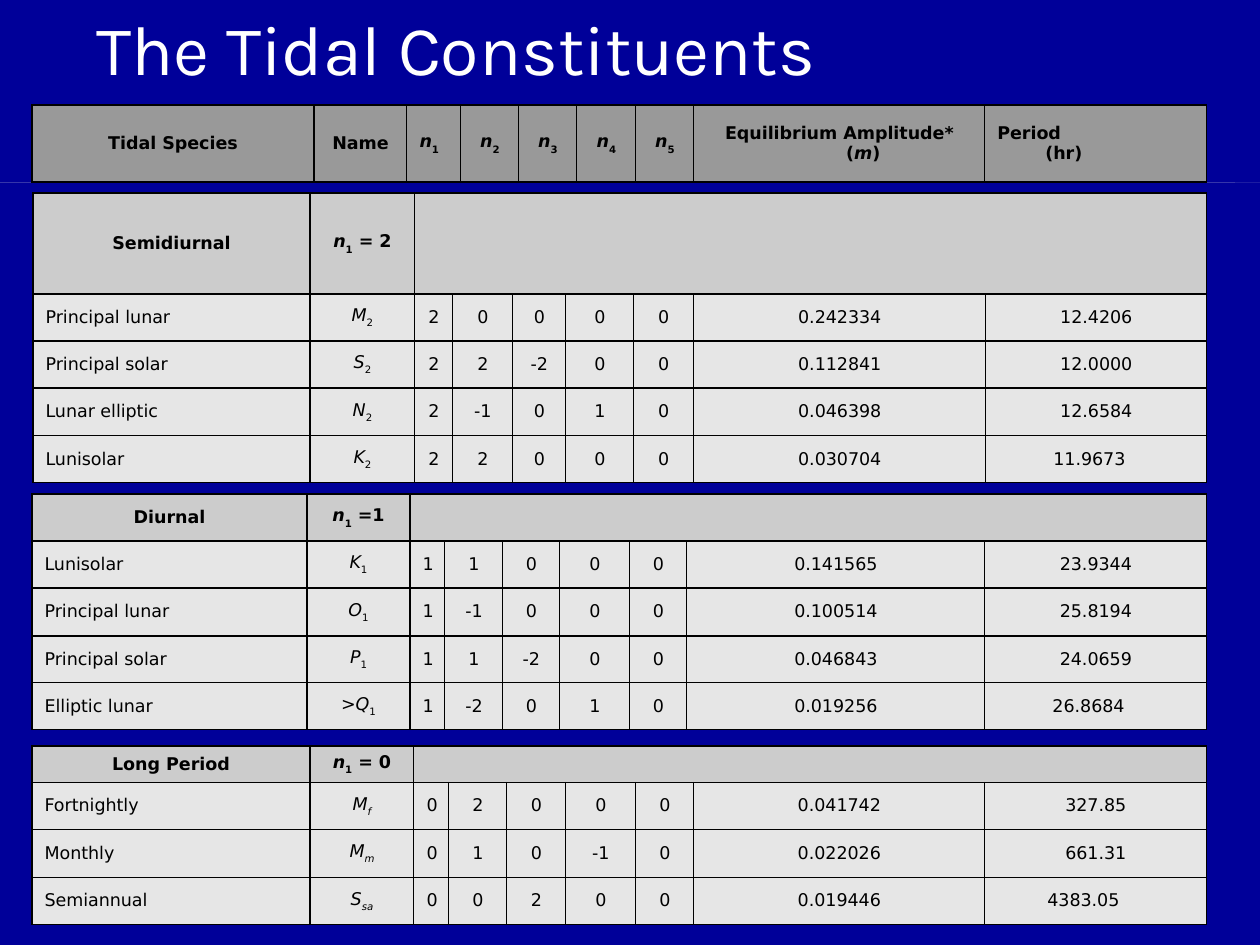
"""Build a slide of four aligned tables listing the tidal constituents."""
from lxml import etree
from pptx import Presentation
from pptx.dml.color import RGBColor
from pptx.enum.shapes import MSO_SHAPE
from pptx.enum.text import MSO_ANCHOR, PP_ALIGN
from pptx.oxml.ns import qn
from pptx.util import Pt

PX = 914400 // 126 + 1
RECT = MSO_SHAPE.RECTANGLE
MIDDLE = MSO_ANCHOR.MIDDLE
LEFT, CENTER = PP_ALIGN.LEFT, PP_ALIGN.CENTER
TITLE_FONT, TABLE_FONT = "Karla", "DejaVu Sans"
TABLE_SIZE = 10
HANG = 48
COLORS = {
    "background": "000099",
    "title": "FFFFFF",
    "text": "000000",
    "header": "999999",
    "group": "CCCCCC",
    "body": "E6E6E6",
}

HEADER_COLS = [282, 93, 54, 58, 58, 59, 58, 291, 222]
GROUPS = [
    {
        "name": "Semidiurnal", "tail": " = 2", "at": (33, 193), "indent": 55,
        "cols": [277, 105, 38, 60, 53, 68, 60, 292, 221],
        "rows": [101, 47, 47, 48, 47],
        "data": [
            ("Principal lunar", "", "M", "2", "2 0 0 0 0 0.242334 12.4206"),
            ("Principal solar", "", "S", "2", "2 2 -2 0 0 0.112841 12.0000"),
            ("Lunar elliptic", "", "N", "2", "2 -1 0 1 0 0.046398 12.6584"),
            ("Lunisolar", "", "K", "2", "2 2 0 0 0 0.030704 11.9673"),
        ],
    },
    {
        "name": "Diurnal", "tail": " =1", "at": (32, 494), "indent": 55,
        "cols": [275, 103, 35, 58, 57, 70, 57, 298, 222],
        "rows": [47, 47, 48, 47, 47],
        "data": [
            ("Lunisolar", "", "K", "1", "1 1 0 0 0 0.141565 23.9344"),
            ("Principal lunar", "", "O", "1", "1 -1 0 0 0 0.100514 25.8194"),
            ("Principal solar", "", "P", "1", "1 1 -2 0 0 0.046843 24.0659"),
            ("Elliptic lunar", ">", "Q", "1", "1 -2 0 1 0 0.019256 26.8684"),
        ],
    },
    {
        "name": "Long Period", "tail": " = 0", "at": (32, 746), "indent": 50,
        "cols": [278, 104, 35, 58, 59, 70, 58, 291, 222],
        "rows": [36, 47, 48, 47],
        "data": [
            ("Fortnightly", "", "M", "f", "0 2 0 0 0 0.041742 327.85"),
            ("Monthly", "", "M", "m", "0 1 0 -1 0 0.022026 661.31"),
            ("Semiannual", "", "S", "sa", "0 0 2 0 0 0.019446 4383.05"),
        ],
    },
]


def rgb(name):
    """Return the named colour."""
    return RGBColor.from_string(COLORS[name])


def plain(text):
    """Return a single unstyled run."""
    return [(text, "")]


def symbol(letter, sub):
    """Return an italic letter with its subscript; letter subscripts are italic."""
    return [(letter, "i"), (sub, "si" if sub.isalpha() else "s")]


def add_title(s, text):
    """Add the slide title."""
    box = s.shapes.add_textbox(84 * PX, 0, 1134 * PX, 95 * PX)
    tf = box.text_frame
    tf.word_wrap = True
    tf.vertical_anchor = MIDDLE
    r = tf.paragraphs[0].add_run()
    r.text = text
    r.font.name, r.font.size = TITLE_FONT, Pt(40)
    r.font.color.rgb = rgb("title")


def add_rule(s, y, width):
    """Add a hairline rectangle from the left edge."""
    sp = s.shapes.add_shape(RECT, 0, y * PX, width * PX, 0)
    sp.shadow.inherit = False
    sp.fill.solid()
    sp.fill.fore_color.rgb = rgb("body")
    sp.line.fill.background()


def add_table(s, at, cols, rows):
    """Add an unstyled table with the given column widths and row heights."""
    x, y = at
    frame = s.shapes.add_table(len(rows), len(cols), x * PX, y * PX,
                               sum(cols) * PX, sum(rows) * PX)
    table = frame.table
    table.first_row = table.horz_banding = False
    for column, width in zip(table.columns, cols):
        column.width = width * PX
    for row, height in zip(table.rows, rows):
        row.height = height * PX
    return table


def style_cell(cell, fill):
    """Give a cell its borders, fill and anchor."""
    tc_pr = cell._tc.get_or_add_tcPr()
    for side in ("a:lnL", "a:lnR", "a:lnT", "a:lnB"):
        ln = etree.SubElement(tc_pr, qn(side), w=str(Pt(0.75)))
        solid = etree.SubElement(ln, qn("a:solidFill"))
        etree.SubElement(solid, qn("a:srgbClr"), val=COLORS["text"])
    cell.fill.solid()
    cell.fill.fore_color.rgb = rgb(fill)
    cell.vertical_anchor = MIDDLE


def write_cell(cell, runs, bold=False, align=CENTER, left=HANG, first=-HANG):
    """Write runs into a cell; a newline run becomes a line break."""
    p = cell.text_frame.paragraphs[0]
    p.alignment = align
    p_pr = p._p.get_or_add_pPr()
    p_pr.set("marL", str(left * PX))
    p_pr.set("indent", str(first * PX))
    for text, style in runs:
        if text == "\n":
            p.add_line_break()
            continue
        r = p.add_run()
        r.text = text
        r.font.name, r.font.size = TABLE_FONT, Pt(TABLE_SIZE)
        r.font.bold, r.font.italic = bold, "i" in style
        r.font.color.rgb = rgb("text")
        if "s" in style:
            r.font._element.set("baseline", "-30000")


def add_header(s):
    """Add the table of column headings."""
    table = add_table(s, (32, 105), HEADER_COLS, [77])
    headings = [plain("Tidal Species"), plain("Name")]
    headings += [symbol("n", str(i)) for i in range(1, 6)]
    headings.append([("Equilibrium Amplitude*", ""), ("\n", ""),
                     ("(", ""), ("m", "i"), (")", "")])
    headings.append([("Period", ""), ("\n", ""), ("(hr)", "")])
    for col, runs in enumerate(headings):
        cell = table.cell(0, col)
        style_cell(cell, "header")
        write_cell(cell, runs, True, LEFT if col in (2, 8) else CENTER)


def add_group(s, group):
    """Add the table of one tidal species; an indent sets its last period."""
    table = add_table(s, group["at"], group["cols"], group["rows"])
    for col in range(len(group["cols"])):
        cell = table.cell(0, col)
        style_cell(cell, "group")
        end = cell.text_frame.paragraphs[0]._p.get_or_add_endParaRPr()
        end.set("sz", str(TABLE_SIZE * 100))
    table.cell(0, 2).merge(table.cell(0, 8))
    write_cell(table.cell(0, 0), plain(group["name"]), True)
    write_cell(table.cell(0, 1), symbol("n", "1") + plain(group["tail"]), True)
    last = len(group["data"])
    for row, (name, prefix, letter, sub, values) in enumerate(group["data"], 1):
        mark = plain(prefix) if prefix else []
        contents = [plain(name), mark + symbol(letter, sub)]
        contents += [plain(value) for value in values.split()]
        for col, runs in enumerate(contents):
            cell = table.cell(row, col)
            style_cell(cell, "body")
            if (row, col) == (last, 8):
                write_cell(cell, runs, False, LEFT, group["indent"], 0)
            else:
                write_cell(cell, runs, False, CENTER if col else LEFT)


def main():
    """Build and save the slide."""
    prs = Presentation()
    prs.slide_width, prs.slide_height = 1260 * PX, 945 * PX
    s = prs.slides.add_slide(prs.slide_layouts[6])
    s.background.fill.solid()
    s.background.fill.fore_color.rgb = rgb("background")
    for width in (1235, 1260):
        add_rule(s, 183, width)
    add_header(s)
    for group in GROUPS:
        add_group(s, group)
    add_title(s, "The Tidal Constituents")
    prs.save("out.pptx")


if __name__ == "__main__":
    main()
